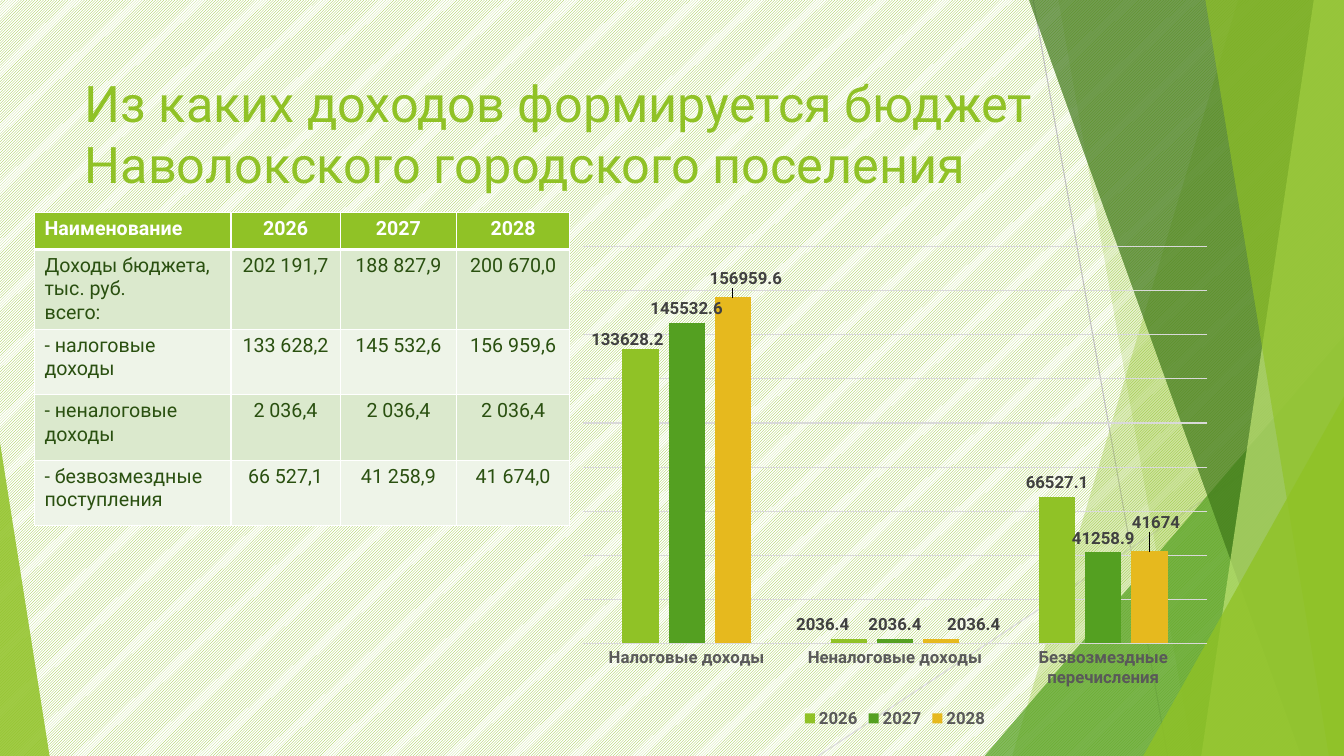
import pptx
import pptx.chart.data
import pptx.dml.color
import pptx.enum.chart
import pptx.enum.dml
import pptx.enum.shapes
import pptx.enum.text
import pptx.oxml
import pptx.oxml.ns
import pptx.util

COLUMNS, ROWS = 16, 9
FONT = "Roboto"
LIME, GREEN, DARK_GREEN, PALE_LIME, GOLD = "90C226", "54A021", "3F7819", "C0E474", "E6B91E"
WHITE, TABLE_TEXT, BAND_DARK, BAND_LIGHT = "FFFFFF", "2A5010", "DBE9CD", "EEF4E8"
GRID_GREY, LINE_GREY, AXIS_TEXT, LABEL_TEXT = "D9D9D9", "BFBFBF", "595959", "404040"
LEFT = pptx.enum.text.PP_ALIGN.LEFT
CENTER = pptx.enum.text.PP_ALIGN.CENTER


def color(value):
    return pptx.dml.color.RGBColor.from_string(value)


def format_font(font, size, fill, bold=False):
    font.name, font.size, font.bold = FONT, pptx.util.Pt(size), bold
    font.color.rgb = color(fill)


def write_text(frame, text, size=14, fill=TABLE_TEXT, bold=False, align=LEFT):
    frame.word_wrap = True
    for index, line in enumerate(text.split("\n")):
        paragraph = frame.paragraphs[0] if index == 0 else frame.add_paragraph()
        paragraph.alignment = align
        run = paragraph.add_run()
        run.text = line
        format_font(run.font, size, fill, bold)


def make_element(xml):
    namespaces = pptx.oxml.ns.nsdecls("a", "c")
    return pptx.oxml.parse_xml(xml.replace(" ns", " " + namespaces, 1))


class SlideBuilder:
    def __init__(self, presentation):
        self.width, self.height = presentation.slide_width, presentation.slide_height
        self.slide = presentation.slides.add_slide(presentation.slide_layouts[5])
        self.shapes = self.slide.shapes

    def x(self, columns):
        return round(self.width * columns / COLUMNS)

    def y(self, rows):
        return round(self.height * rows / ROWS)

    def box(self, left, top, width, height):
        return self.x(left), self.y(top), self.x(width), self.y(height)

    def background(self, foreground, background):
        fill = self.slide.background.fill
        fill.patterned()
        fill.pattern = pptx.enum.dml.MSO_PATTERN.LIGHT_UPWARD_DIAGONAL
        fill.fore_color.rgb, fill.back_color.rgb = color(foreground), color(background)

    def line(self, start, end, stroke):
        connector = self.shapes.add_connector(
            pptx.enum.shapes.MSO_CONNECTOR.STRAIGHT,
            self.x(start[0]), self.y(start[1]), self.x(end[0]), self.y(end[1]))
        connector.line.color.rgb = color(stroke)
        connector.line.width = pptx.util.Pt(0.75)
        connector.element.spPr.append(make_element("<a:effectLst ns/>"))

    def paint(self, shape, fill, opacity):
        shape.shadow.inherit = False
        shape.line.fill.background()
        shape.fill.solid()
        shape.fill.fore_color.rgb = color(fill)
        solid = shape.element.spPr.find(pptx.oxml.ns.qn("a:solidFill"))
        solid[0].append(make_element(f'<a:alpha ns val="{opacity * 1000}"/>'))

    def band(self, top_left, bottom_left, fill, opacity):
        """Full-height band from a slanted left edge to the slide's right edge."""
        builder = self.shapes.build_freeform(self.x(top_left), 0)
        builder.add_line_segments([(self.width, 0), (self.width, self.height),
                                   (self.x(bottom_left), self.height)], close=True)
        self.paint(builder.convert_to_shape(), fill, opacity)

    def triangle(self, left, top, width, apex, fill, opacity):
        shape = self.shapes.add_shape(pptx.enum.shapes.MSO_SHAPE.ISOSCELES_TRIANGLE,
                                      *self.box(left, top, width, ROWS - top))
        shape.adjustments[0] = apex
        self.paint(shape, fill, opacity)

    def title(self, text, left, top, width, height):
        title = self.shapes.title
        title.left, title.top, title.width, title.height = self.box(left, top, width, height)
        frame = title.text_frame
        frame.auto_size = pptx.enum.text.MSO_AUTO_SIZE.NONE
        frame.vertical_anchor = pptx.enum.text.MSO_ANCHOR.TOP
        write_text(frame, text, size=36, fill=LIME)
        title.element.getparent().append(title.element)  # in front of the decoration

    def borders(self, cell, bottom):
        properties = cell._tc.get_or_add_tcPr()
        for index, (side, points) in enumerate(dict(L=1, R=1, T=1, B=bottom).items()):
            properties.insert(index, make_element(
                f'<a:ln{side} ns w="{points * 12700}"><a:solidFill>'
                f'<a:srgbClr val="{WHITE}"/></a:solidFill></a:ln{side}>'))

    def table(self, data, left, top, widths, heights):
        table = self.shapes.add_table(len(heights), len(widths), *self.box(
            left, top, sum(widths), sum(heights))).table
        for column, width in zip(table.columns, widths):
            column.width = self.x(width)
        for row, height in zip(table.rows, heights):
            row.height = self.y(height)
        for row_index, values in enumerate(data):
            header = row_index == 0
            band = LIME if header else (BAND_LIGHT, BAND_DARK)[row_index % 2]
            for column_index, value in enumerate(values):
                cell = table.cell(row_index, column_index)
                cell.fill.solid()
                cell.fill.fore_color.rgb = color(band)
                self.borders(cell, bottom=3 if header else 1)
                write_text(cell.text_frame, value, bold=header,
                           fill=WHITE if header else TABLE_TEXT,
                           align=CENTER if column_index else LEFT)

    def chart(self, categories, series_values, label_shifts, left, top, width, height):
        data = pptx.chart.data.CategoryChartData()
        data.categories = categories
        for name, (values, _) in series_values.items():
            data.add_series(name, values)
        chart = self.shapes.add_chart(pptx.enum.chart.XL_CHART_TYPE.COLUMN_CLUSTERED,
                                      *self.box(left, top, width, height), data).chart
        format_font(chart.font, 10, "000000")
        chart.has_title = False
        chart.has_legend = True
        chart.legend.position = pptx.enum.chart.XL_LEGEND_POSITION.BOTTOM
        chart.legend.include_in_layout = False
        format_font(chart.legend.font, 12, AXIS_TEXT, bold=True)

        # Axes
        category_axis, value_axis = chart.category_axis, chart.value_axis
        category_axis.major_tick_mark = pptx.enum.chart.XL_TICK_MARK.NONE
        format_font(category_axis.tick_labels.font, 12, AXIS_TEXT, bold=True)
        value_axis.visible = False
        value_axis.minimum_scale, value_axis.maximum_scale = 0, 180000
        value_axis.major_unit = 20000
        for line in (category_axis.format.line, value_axis.major_gridlines.format.line):
            line.color.rgb = color(GRID_GREY)
            line.width = pptx.util.Pt(0.75)

        # Columns and their value labels
        plot = chart.plots[0]
        plot.gap_width, plot.overlap, plot.vary_by_categories = 219, -27, False
        outside = pptx.enum.chart.XL_LABEL_POSITION.OUTSIDE_END
        for series in plot.series:
            series.format.fill.solid()
            series.format.fill.fore_color.rgb = color(series_values[series.name][1])
            series.data_labels.show_value = True
            series.data_labels.position = outside
            format_font(series.data_labels.font, 12, LABEL_TEXT, bold=True)
            for point, (shift_x, shift_y) in label_shifts.get(series.name, {}).items():
                label = series.points[point].data_label
                format_font(label.font, 12, LABEL_TEXT, bold=True)
                label.position = outside
                element = series.data_labels._element.xpath(
                    f'c:dLbl[c:idx/@val="{point}"]')[0]
                element.insert(1, make_element(
                    f'<c:layout ns><c:manualLayout><c:x val="{shift_x}"/>'
                    f'<c:y val="{shift_y}"/></c:manualLayout></c:layout>'))


def main():
    presentation = pptx.Presentation()
    presentation.slide_width = pptx.util.Inches(13.33)
    presentation.slide_height = pptx.util.Inches(7.5)
    builder = SlideBuilder(presentation)

    # Background and side decoration, back to front
    builder.background(LIME, WHITE)
    builder.line((12.3, 0), (13.9, ROWS), LINE_GREY)
    builder.line((COLUMNS, 4.84), (9.74, ROWS), GRID_GREY)
    builder.band(14.74, 12.05, LIME, 30)
    builder.band(12.6, 14.2, LIME, 20)
    builder.triangle(11.72, 4, 4.28, 1, GREEN, 72)
    builder.band(12.25, 15.49, DARK_GREEN, 70)
    builder.band(15.64, 14.3, PALE_LIME, 70)
    builder.band(14.35, 15.82, LIME, 65)
    builder.triangle(13.61, 4.72, 2.39, 1, LIME, 80)
    builder.triangle(0, 5.27, 0.59, 0, LIME, 85)

    builder.title("Из каких доходов формируется бюджет Наволокского городского поселения",
                  0.89, 0.8, 12.85, 1.73)

    # Budget revenue table
    builder.table([
        ("Наименование", "2026", "2027", "2028"),
        ("Доходы бюджета, тыс. руб.\nвсего:", "202 191,7", "188 827,9", "200 670,0"),
        ("- налоговые доходы", "133 628,2", "145 532,6", "156 959,6"),
        ("- неналоговые доходы", "2 036,4", "2 036,4", "2 036,4"),
        ("- безвозмездные поступления", "66 527,1", "41 258,9", "41 674,0"),
    ], 0.41, 2.53, (2.34, 1.3, 1.39, 1.34), (0.44, 0.65, 0.78, 0.78, 0.78))

    # Revenue by kind and year
    builder.chart(
        ("Налоговые доходы", "Неналоговые доходы", "Безвозмездные перечисления"),
        {"2026": ((133628.2, 2036.4, 66527.1), LIME),
         "2027": ((145532.6, 2036.4, 41258.9), GREEN),
         "2028": ((156959.6, 2036.4, 41674), GOLD)},
        {"2026": {0: (-0.02, 0.01), 1: (-0.04, 0)},
         "2028": {0: (0.02, -0.01), 1: (0.05, 0), 2: (0.01, -0.03)}},
        6.78, 2.82, 7.75, 5.9)

    presentation.save("out.pptx")


if __name__ == "__main__":
    main()
